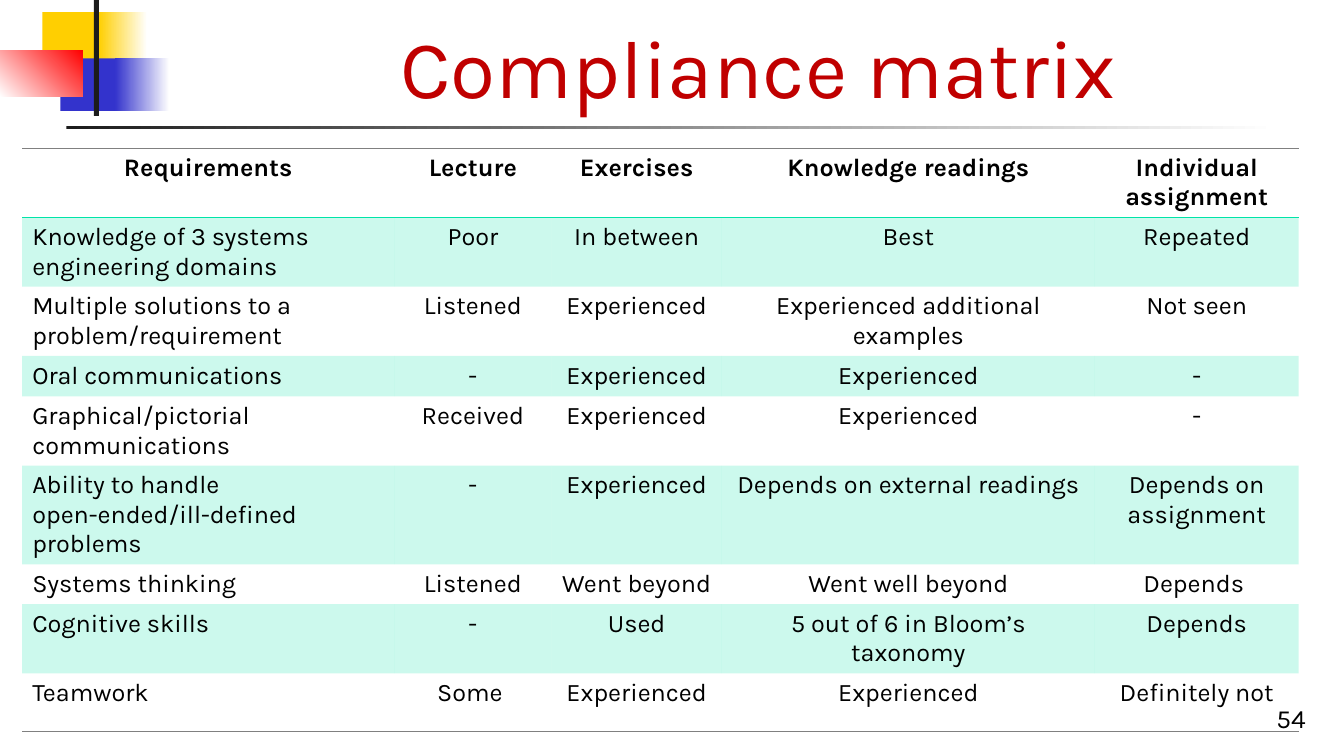
from dataclasses import dataclass
from lxml import etree
from pptx import Presentation
from pptx import util as u
from pptx.dml import color
from pptx.enum import shapes, text
from pptx.oxml import ns


@dataclass(frozen=True)
class Theme:
    font: str = "Karla"
    ink: str = "000000"
    title: str = "C00000"
    white: str = "FFFFFF"
    yellow: str = "FFCF01"
    blue: str = "3333CC"
    red: str = "FF0000"
    dark: str = "1C1C1C"
    mint: str = "00E4A8"
    rule: str = "808080"
    band_alpha: int = 20
    title_size: float = 58.7
    cell_size: float = 18
    number_size: float = 18.7


EMU_PER_PX = 9144
NO_GRID_STYLE = "{2D5ABB26-0587-4C30-8999-92F81FD0307C}"
CENTER, LEFT, RIGHT = text.PP_ALIGN.CENTER, text.PP_ALIGN.LEFT, text.PP_ALIGN.RIGHT


def px(n):
    return u.Emu(n * EMU_PER_PX)


def rgb(value):
    return color.RGBColor.from_string(value)


class SlideBuilder:
    def __init__(self, s, theme):
        self.s = s
        self.theme = theme

    def add_words(self, tf, words, size, ink, align, bold=False):
        p = tf.paragraphs[0]
        p.alignment = align
        r = p.add_run()
        r.text = words
        formats = {"name": self.theme.font, "size": u.Pt(size), "bold": bold}
        for name, value in formats.items():
            setattr(r.font, name, value)
        r.font.color.rgb = rgb(ink)

    def frame(self, tf):
        formats = {
            "word_wrap": True,
            "auto_size": text.MSO_AUTO_SIZE.NONE,
            "vertical_anchor": text.MSO_ANCHOR.BOTTOM,
        }
        for name, value in formats.items():
            setattr(tf, name, value)

    def title(self, words, box):
        sp = self.s.shapes.title
        for name, value in zip(("left", "top", "width", "height"), box):
            setattr(sp, name, px(value))
        self.frame(sp.text_frame)
        self.add_words(sp.text_frame, words, self.theme.title_size, self.theme.title, CENTER)

    def number(self, words, box):
        sp = self.s.shapes.add_textbox(*map(px, box))
        self.frame(sp.text_frame)
        self.add_words(sp.text_frame, words, self.theme.number_size, self.theme.ink, RIGHT)

    def block(self, box, start, end=None, angle=0):
        sp = self.s.shapes.add_shape(shapes.MSO_SHAPE.RECTANGLE, *map(px, box))
        sp.shadow.inherit = False
        sp.line.fill.background()
        if end is None:
            sp.fill.solid()
            sp.fill.fore_color.rgb = rgb(start)
            return
        sp.fill.gradient()
        sp.fill.gradient_angle = angle
        for stop, position, value in zip(sp.fill.gradient_stops, (0, 1), (start, end)):
            stop.position = position
            stop.color.rgb = rgb(value)

    def border(self, cell, side, value):
        tcPr = cell._tc.get_or_add_tcPr()
        ln = etree.SubElement(tcPr, ns.qn(f"a:ln{side}"), w=str(u.Pt(1)))
        fill = etree.SubElement(ln, ns.qn("a:solidFill"))
        etree.SubElement(fill, ns.qn("a:srgbClr"), val=value)

    def shade(self, cell, banded):
        if not banded:
            cell.fill.background()
            return
        cell.fill.solid()
        cell.fill.fore_color.rgb = rgb(self.theme.mint)
        tint = cell._tc.tcPr.find(".//" + ns.qn("a:srgbClr"))
        etree.SubElement(tint, ns.qn("a:alpha"), val=str(self.theme.band_alpha * 1000))

    def table(self, rows, left, top, widths, heights):
        box = (left, top, sum(widths), sum(heights))
        frame = self.s.shapes.add_table(len(rows), len(widths), *map(px, box))
        tbl = frame.table
        frame._element.find(".//" + ns.qn("a:tableStyleId")).text = NO_GRID_STYLE
        for column, width in zip(tbl.columns, widths):
            column.width = px(width)
        for row, height in zip(tbl.rows, heights):
            row.height = px(height)
        last = len(rows) - 1
        for i, row in enumerate(rows):
            for j, words in enumerate(row):
                cell = tbl.cell(i, j)
                header = i == 0
                align = LEFT if j == 0 and not header else CENTER
                self.add_words(cell.text_frame, words, self.theme.cell_size,
                               self.theme.ink, align, header)
                if header:
                    self.border(cell, "T", self.theme.rule)
                    self.border(cell, "B", self.theme.mint)
                if i == last:
                    self.border(cell, "B", self.theme.rule)
                self.shade(cell, i % 2 == 1)


MATRIX = [
    ("Requirements", "Lecture", "Exercises", "Knowledge readings", "Individual assignment"),
    ("Knowledge of 3 systems engineering domains", "Poor", "In between", "Best", "Repeated"),
    ("Multiple solutions to a problem/requirement", "Listened", "Experienced",
     "Experienced additional examples", "Not seen"),
    ("Oral communications", "-", "Experienced", "Experienced", "-"),
    ("Graphical/pictorial communications", "Received", "Experienced", "Experienced", "-"),
    ("Ability to handle open-ended/ill-defined problems", "-", "Experienced",
     "Depends on external readings", "Depends on assignment"),
    ("Systems thinking", "Listened", "Went beyond", "Went well beyond", "Depends "),
    ("Cognitive skills", "-", "Used", "5 out of 6 in Bloom’s taxonomy", "Depends"),
    ("Teamwork", "Some ", "Experienced", "Experienced", "Definitely not"),
]
COLUMN_WIDTHS = (369, 156, 169, 370, 202)
ROW_HEIGHTS = (61, 61, 61, 40, 35, 61, 35, 37, 58)


def main():
    prs = Presentation()
    prs.slide_width, prs.slide_height = px(1333), px(750)
    theme = Theme()
    slide = SlideBuilder(prs.slides.add_slide(prs.slide_layouts[5]), theme)

    slide.block((42, 12, 64, 52), theme.yellow)
    slide.block((98, 12, 48, 52), theme.yellow, theme.white)
    slide.block((60, 58, 62, 52), theme.blue)
    slide.block((114, 58, 54, 52), theme.blue, theme.white)
    slide.block((0, 50, 82, 46), theme.white, theme.red, 45)
    slide.block((93, 0, 5, 115), theme.dark)
    slide.block((66, 125, 1200, 3), theme.dark, theme.white)

    slide.title("Compliance matrix", (189, 27, 1126, 92))
    slide.table(MATRIX, 22, 147, COLUMN_WIDTHS, ROW_HEIGHTS)
    slide.number("54", (1027, 683, 278, 50))
    prs.save("out.pptx")


if __name__ == "__main__":
    main()
